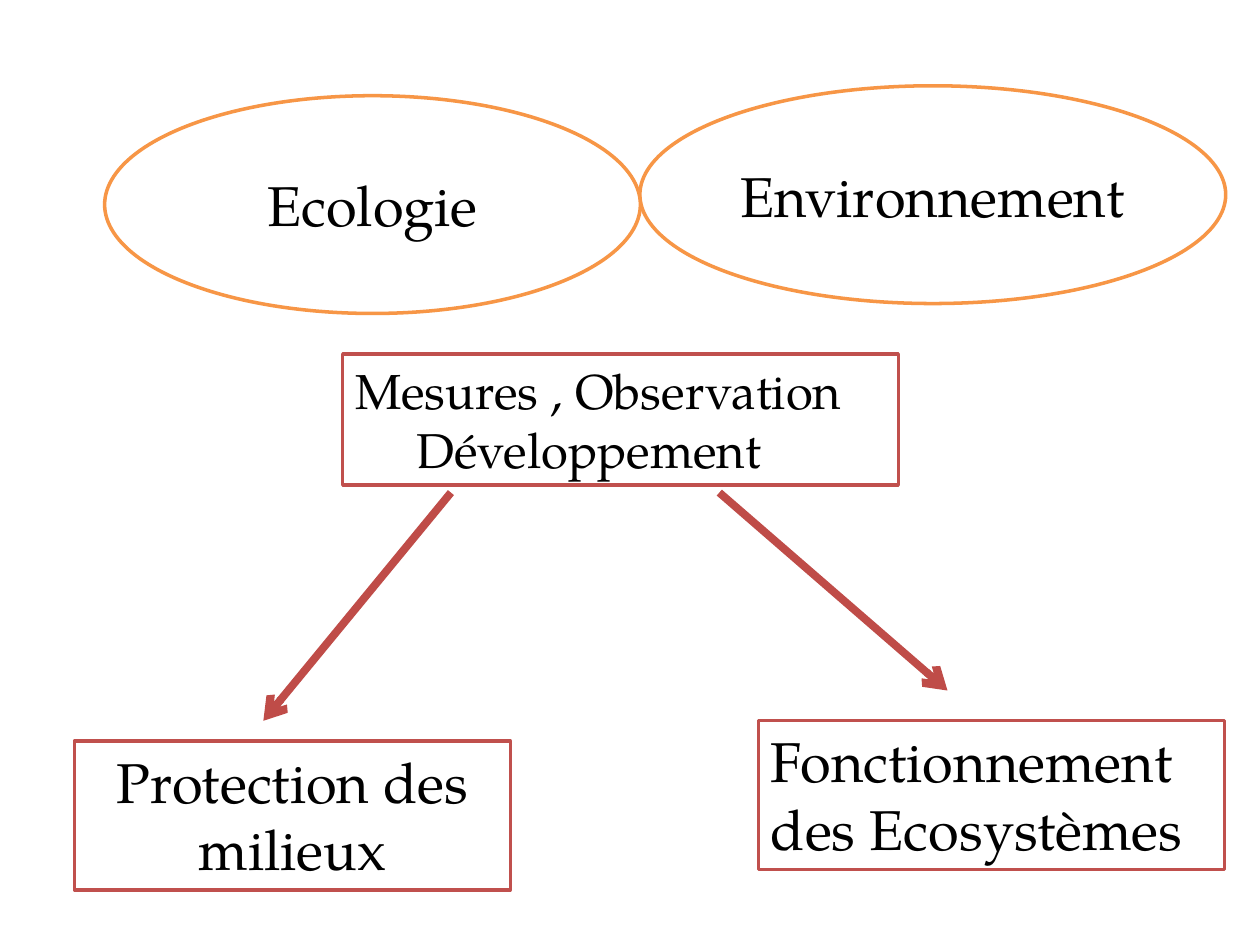
from dataclasses import dataclass

from lxml.etree import SubElement
from pptx import Presentation
from pptx.dml.color import RGBColor
from pptx.enum.shapes import MSO_CONNECTOR, MSO_SHAPE
from pptx.enum.text import MSO_ANCHOR, MSO_AUTO_SIZE, PP_ALIGN
from pptx.oxml.ns import qn
from pptx.slide import Slide
from pptx.util import Cm, Pt

FONT = "TeX Gyre Pagella"
COLORS = {
    "background": "FFFFFF",
    "text": "000000",
    "box": "C0504D",
    "ellipse": "F79646",
    "arrow": "BF4C48",
}


@dataclass(frozen=True)
class Label:
    text: str
    left: float
    top: float
    width: float
    height: float
    size: int = 32
    centered: bool = False
    oval: bool = False
    last_indent: float = 0


@dataclass(frozen=True)
class Arrow:
    start_x: float
    start_y: float
    end_x: float
    end_y: float


LABELS = [
    Label("Fonctionnement des Ecosystèmes", 15.29, 14.53, 9.4, 3),
    Label("Protection des milieux", 1.5, 14.94, 8.79, 3, centered=True),
    Label("Mesures , Observation\nDéveloppement", 6.91, 7.14, 11.2, 2.64, size=28, last_indent=1.24),
    Label("Environnement", 12.9, 1.73, 11.81, 4.39, centered=True, oval=True),
    Label("Ecologie", 2.11, 1.93, 10.8, 4.39, centered=True, oval=True),
]
ARROWS = [
    Arrow(14.5, 9.93, 19.1, 13.92),
    Arrow(9.09, 9.93, 5.31, 14.53),
]


def color(name: str) -> RGBColor:
    return RGBColor.from_string(COLORS[name])


def draw_label(slide: Slide, label: Label) -> None:
    shape = slide.shapes.add_shape(
        MSO_SHAPE.OVAL if label.oval else MSO_SHAPE.RECTANGLE,
        Cm(label.left), Cm(label.top), Cm(label.width), Cm(label.height),
    )
    shape.shadow.inherit = False
    shape.fill.solid()
    shape.fill.fore_color.rgb = color("background")
    shape.line.color.rgb = color("ellipse" if label.oval else "box")
    shape.line.width = Pt(2)

    text_frame = shape.text_frame
    text_frame.text = label.text
    text_frame.word_wrap = True
    text_frame.vertical_anchor = MSO_ANCHOR.MIDDLE if label.oval else MSO_ANCHOR.TOP
    text_frame.auto_size = MSO_AUTO_SIZE.NONE if label.oval else MSO_AUTO_SIZE.SHAPE_TO_FIT_TEXT
    for paragraph in text_frame.paragraphs:
        paragraph.alignment = PP_ALIGN.CENTER if label.centered else PP_ALIGN.LEFT
        for run in paragraph.runs:
            run.font.name = FONT
            run.font.size = Pt(label.size)
            run.font.color.rgb = color("text")
    if label.last_indent:
        properties = text_frame.paragraphs[-1]._p.get_or_add_pPr()
        properties.set("marL", str(Cm(label.last_indent)))


def draw_arrow(slide: Slide, arrow: Arrow) -> None:
    connector = slide.shapes.add_connector(
        MSO_CONNECTOR.STRAIGHT,
        Cm(arrow.start_x), Cm(arrow.start_y), Cm(arrow.end_x), Cm(arrow.end_y),
    )
    connector.line.color.rgb = color("arrow")
    connector.line.width = Pt(4.5)
    SubElement(connector.line._get_or_add_ln(), qn("a:tailEnd"), type="arrow")
    SubElement(connector._element.spPr, qn("a:effectLst"))


def main() -> None:
    presentation = Presentation()
    presentation.slide_width = Cm(25.4)
    presentation.slide_height = Cm(19.05)
    slide = presentation.slides.add_slide(presentation.slide_layouts[6])
    for label in LABELS:
        draw_label(slide, label)
    for arrow in ARROWS:
        draw_arrow(slide, arrow)
    presentation.save("out.pptx")


if __name__ == "__main__":
    main()
